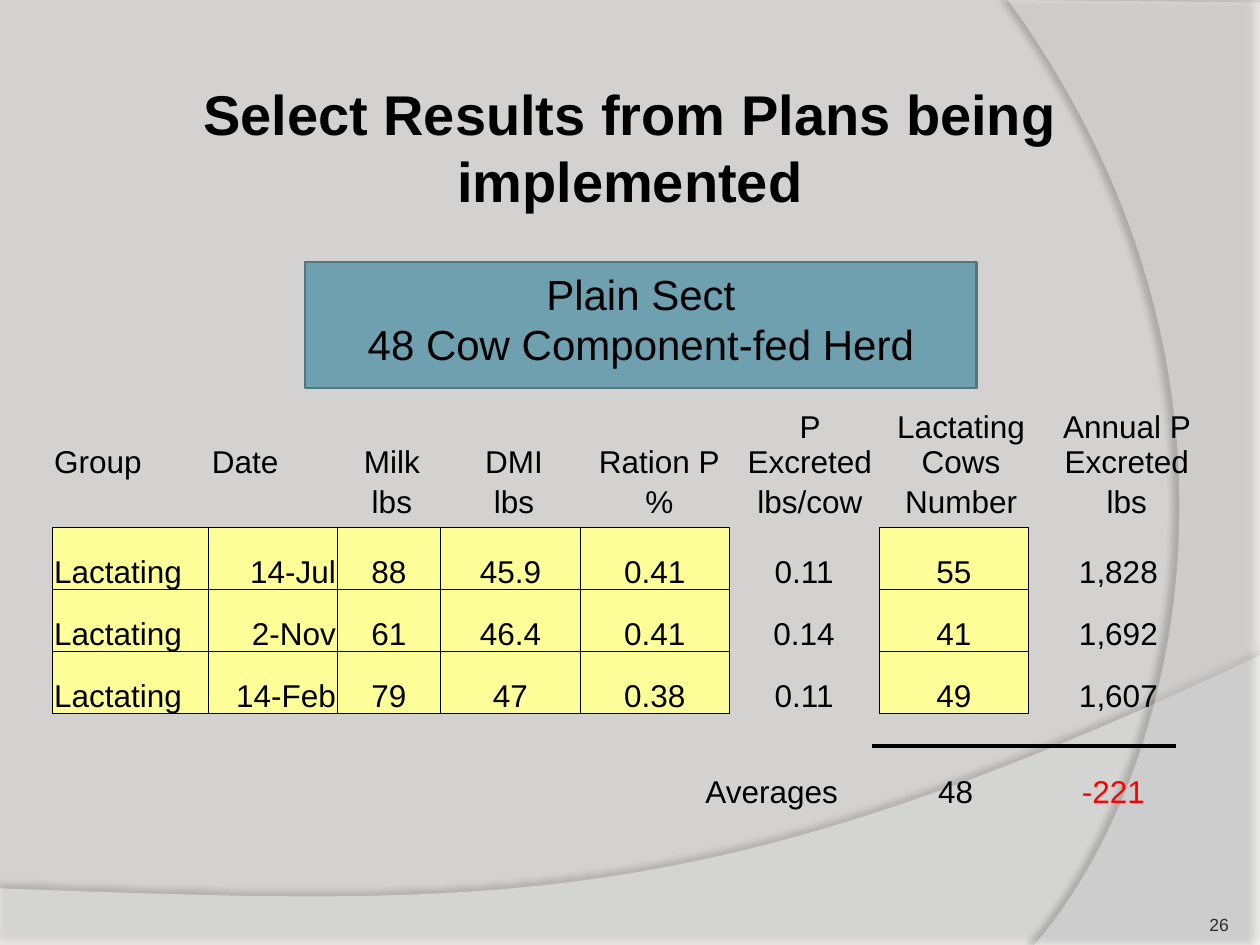
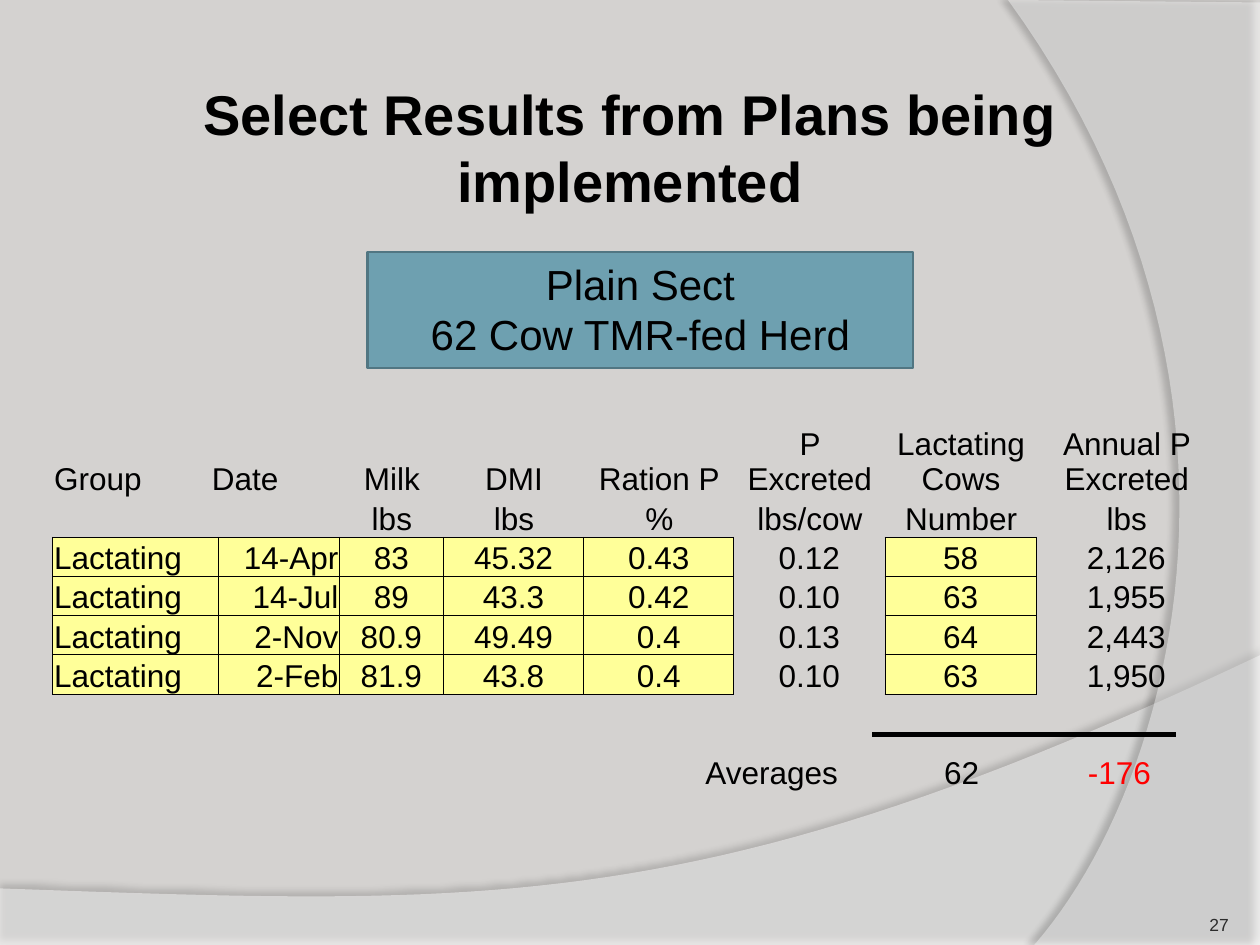
from lxml import etree
from pptx import Presentation
from pptx.dml.color import RGBColor
from pptx.enum.shapes import MSO_CONNECTOR, MSO_SHAPE
from pptx.enum.text import MSO_ANCHOR, PP_ALIGN
from pptx.oxml.ns import qn
from pptx.util import Cm, Pt

LEFT, CENTER, RIGHT = PP_ALIGN.LEFT, PP_ALIGN.CENTER, PP_ALIGN.RIGHT
TOP, BOTTOM = MSO_ANCHOR.TOP, MSO_ANCHOR.BOTTOM
RECTANGLE, STRAIGHT = MSO_SHAPE.RECTANGLE, MSO_CONNECTOR.STRAIGHT

COLORS = {
    "background": "D4D2D0",
    "swoosh": "FFFFFF",
    "herd_box": "6EA0B0",
    "herd_edge": "517682",
    "input_cell": "FFFF99",
    "text": "000000",
    "page_number": "2C2C2C",
    "reduction": "FF0000",
}
FONT = "Arial"
WIDTH, HEIGHT = 25.4, 19.05
TITLE = "Select Results from Plans being implemented"
PLAIN_STYLE = "{2D5ABB26-0587-4C30-8999-92F81FD0307C}"

# Table content and measures shared by the slides
TABLE_LEFT = 1.06
HEADINGS = [
    ["Group", "Date", "Milk", "DMI", "Ration P", "P Excreted",
     "Lactating Cows", "Annual P Excreted"],
    ["", "", "lbs", "lbs", "%", "lbs/cow", "Number", "lbs"],
]
HEADING_WIDTHS = [3.18, 2.62, 2.08, 2.84, 3.02, 3.05, 3.05, 3.63]
HEADING_HEIGHTS = [1.55, 0.79]
HEADING_ALIGNS = [LEFT, LEFT] + [CENTER] * 6
RECORD_ALIGNS = [LEFT, RIGHT] + [CENTER] * 6
INPUT_COLUMNS = (0, 1, 2, 3, 4, 6)

HERDS = [
    {
        "page": "26",
        "name": ["Plain Sect", "48 Cow Component-fed Herd"],
        "box": (6.15, 5.28, 13.54, 2.54),
        "headings_top": 8.13,
        "records_top": 10.64,
        "widths": [3.15, 2.59, 2.08, 2.82, 3, 3.02, 3.02, 3.61],
        "row_height": 1.25,
        "records": [
            ["Lactating", "14-Jul", "88", "45.9", "0.41", "0.11", "55", "1,828"],
            ["Lactating", "2-Nov", "61", "46.4", "0.41", "0.14", "41", "1,692"],
            ["Lactating", "14-Feb", "79", "47", "0.38", "0.11", "49", "1,607"],
        ],
        "rule_top": 15.04,
        "averages_top": 15.44,
        "count": "48",
        "change": "-221",
        "count_left": 17.78,
        "average_width": 2.97,
    },
    {
        "page": "27",
        "name": ["Plain Sect", "62 Cow TMR-fed Herd"],
        "box": (7.41, 5.08, 11, 2.34),
        "headings_top": 8.47,
        "records_top": 10.83,
        "widths": [3.35, 2.44] + HEADING_WIDTHS[2:],
        "row_height": 0.79,
        "records": [
            ["Lactating", "14-Apr", "83", "45.32", "0.43", "0.12", "58", "2,126"],
            ["Lactating", "14-Jul", "89", "43.3", "0.42", "0.10", "63", "1,955"],
            ["Lactating", "2-Nov", "80.9", "49.49", "0.4", "0.13", "64", "2,443"],
            ["Lactating", "2-Feb", "81.9", "43.8", "0.4", "0.10", "63", "1,950"],
        ],
        "rule_top": 14.81,
        "averages_top": 15.05,
        "count": "62",
        "change": "-176",
        "count_left": 17.58,
        "average_width": 3.61,
    },
]


def rgb(name):
    return RGBColor.from_string(COLORS[name])


def cms(*lengths):
    return [Cm(length) for length in lengths]


def add_xml(parent, tag, **attributes):
    return etree.SubElement(parent, qn(tag), attributes)


def add_xml_color(parent, name):
    return add_xml(parent, "a:srgbClr", val=COLORS[name])


def format_text(frame, size, align, color="text", bold=False):
    for paragraph in frame.paragraphs:
        paragraph.alignment = align
        for run in paragraph.runs:
            run.font.name, run.font.size, run.font.bold = FONT, Pt(size), bold
            run.font.color.rgb = rgb(color)


# Background
def curve_points(start, control_1, control_2, end, steps=48):
    """Points along a cubic curve, without its start."""
    points = []
    for step in range(1, steps + 1):
        t = step / steps
        weights = ((1 - t) ** 3, 3 * t * (1 - t) ** 2, 3 * t * t * (1 - t), t ** 3)
        points.append(tuple(
            sum(weight * value for weight, value in zip(weights, axis))
            for axis in zip(start, control_1, control_2, end)))
    return points


def add_swoosh(slide, corners, curve, opacity, shadow_opacity, shadow_distance,
               shadow_angle):
    points = [cms(*point) for point in corners + curve_points(corners[-1], *curve)]
    builder = slide.shapes.build_freeform(*points[0], scale=1.0)
    builder.add_line_segments(points[1:], close=True)
    swoosh = builder.convert_to_shape()
    swoosh.fill.solid()
    swoosh.fill.fore_color.rgb = rgb("swoosh")
    swoosh.line.fill.background()
    properties = swoosh.element.spPr
    add_xml(properties.find(".//" + qn("a:solidFill"))[0], "a:alpha",
            val=str(opacity * 1000))
    shadow = add_xml(add_xml(properties, "a:effectLst"), "a:outerShdw",
                     blurRad=str(Pt(4)), dist=str(Pt(shadow_distance)),
                     dir=str(shadow_angle * 60000), rotWithShape="0")
    add_xml(add_xml_color(shadow, "text"), "a:alpha", val=str(shadow_opacity * 1000))
    return swoosh


def decorate_layout(layout, slide):
    """Draw the shared background on a slide, then move it to the layout."""
    layout.background.fill.solid()
    layout.background.fill.fore_color.rgb = rgb("background")
    swooshes = [
        add_swoosh(slide, [(0, 17.91), (0, HEIGHT), (WIDTH, HEIGHT), (WIDTH, 13.21)],
                   [(14.2, 18.52), (9.93, 18.26), (0, 17.91)], 45, 35, 3.5, 270),
        add_swoosh(slide, [(WIDTH, 0.05), (WIDTH, HEIGHT), (20.85, HEIGHT)],
                   [(23.75, 15.72), (25.86, 7.62), (20.32, 0)], 40, 45, 4, 180),
    ]
    for position, swoosh in enumerate(swooshes, start=2):
        layout.shapes.element.insert(position, swoosh.element)


# Text elements
def set_title(slide):
    title = slide.shapes.title
    title.left, title.top, title.width, title.height = cms(0.85, 1.47, 23.7, 3)
    title.text_frame.text = TITLE
    title.text_frame.vertical_anchor = TOP
    format_text(title.text_frame, 32, CENTER, bold=True)


def add_label(slide, text, box, size=18, align=CENTER, color="text"):
    frame = slide.shapes.add_textbox(*cms(*box)).text_frame
    frame.word_wrap = True
    frame.text = text
    format_text(frame, size, align, color)
    return frame


def add_page_number(slide, page):
    frame = add_label(slide, page, (22.66, 17.83, 2.11, 1.02), 10, RIGHT, "page_number")
    frame.vertical_anchor = BOTTOM
    frame.margin_left = frame.margin_right = 0
    frame.margin_top = frame.margin_bottom = 0


def add_herd_box(slide, name, box):
    herd_box = slide.shapes.add_shape(RECTANGLE, *cms(*box))
    herd_box.shadow.inherit = False
    herd_box.fill.solid()
    herd_box.fill.fore_color.rgb = rgb("herd_box")
    herd_box.line.color.rgb = rgb("herd_edge")
    herd_box.line.width = Pt(1.5)
    herd_box.text_frame.text = "\n".join(name)
    herd_box.text_frame.vertical_anchor = TOP
    format_text(herd_box.text_frame, 24, CENTER)


# Tables
def add_grid(slide, rows, top, widths, heights, aligns):
    frame = slide.shapes.add_table(
        len(rows), len(widths), *cms(TABLE_LEFT, top, sum(widths), sum(heights)))
    grid = frame.table
    grid.first_row = grid.horz_banding = False
    next(frame.element.iter(qn("a:tableStyleId"))).text = PLAIN_STYLE
    for column, width in zip(grid.columns, widths):
        column.width = Cm(width)
    for row, height, values in zip(grid.rows, heights, rows):
        row.height = Cm(height)
        for cell, value, align in zip(row.cells, values, aligns):
            cell.text_frame.text = value
            cell.vertical_anchor = BOTTOM
            cell.margin_left = cell.margin_right = cell.margin_top = Cm(0.03)
            cell.margin_bottom = 0
            cell.fill.background()
            format_text(cell.text_frame, 18, align)
    return grid


def add_borders(cell, sides):
    properties = cell._tc.get_or_add_tcPr()
    for position, side in enumerate(sides):
        border = etree.Element(qn("a:ln" + side), w=str(Pt(0.5)))
        add_xml_color(add_xml(border, "a:solidFill"), "text")
        properties.insert(position, border)


def add_records(slide, herd):
    records = herd["records"]
    grid = add_grid(slide, records, herd["records_top"], herd["widths"],
                    [herd["row_height"]] * len(records), RECORD_ALIGNS)
    for row in grid.rows:
        for column, cell in enumerate(row.cells):
            if column in INPUT_COLUMNS:
                cell.fill.solid()
                cell.fill.fore_color.rgb = rgb("input_cell")
                add_borders(cell, "LRTB")
            else:
                add_borders(cell, "L" if column == len(row.cells) - 1 else "LR")


# Averages
def add_averages(slide, herd):
    rule_top, top = herd["rule_top"], herd["averages_top"]
    rule = slide.shapes.add_connector(STRAIGHT, *cms(17.58, rule_top, 23.7, rule_top))
    rule.line.color.rgb = rgb("text")
    rule.line.width = Pt(2.5)
    add_xml(rule.element.spPr, "a:effectLst")

    left, width = herd["count_left"], herd["average_width"]
    add_label(slide, "Averages", (13.97, top, 3.61, 1.02), align=LEFT)
    add_label(slide, herd["count"], (left, top, width, 1.02))
    add_label(slide, herd["change"], (left + 3.18, top, width, 1.02), color="reduction")


def main():
    deck = Presentation()
    deck.slide_width, deck.slide_height = cms(WIDTH, HEIGHT)
    layout = deck.slide_layouts[5]
    for index, herd in enumerate(HERDS):
        slide = deck.slides.add_slide(layout)
        if index == 0:
            decorate_layout(layout, slide)
        set_title(slide)
        add_herd_box(slide, herd["name"], herd["box"])
        add_grid(slide, HEADINGS, herd["headings_top"], HEADING_WIDTHS,
                 HEADING_HEIGHTS, HEADING_ALIGNS)
        add_records(slide, herd)
        add_averages(slide, herd)
        add_page_number(slide, herd["page"])
    deck.save("out.pptx")


if __name__ == "__main__":
    main()
